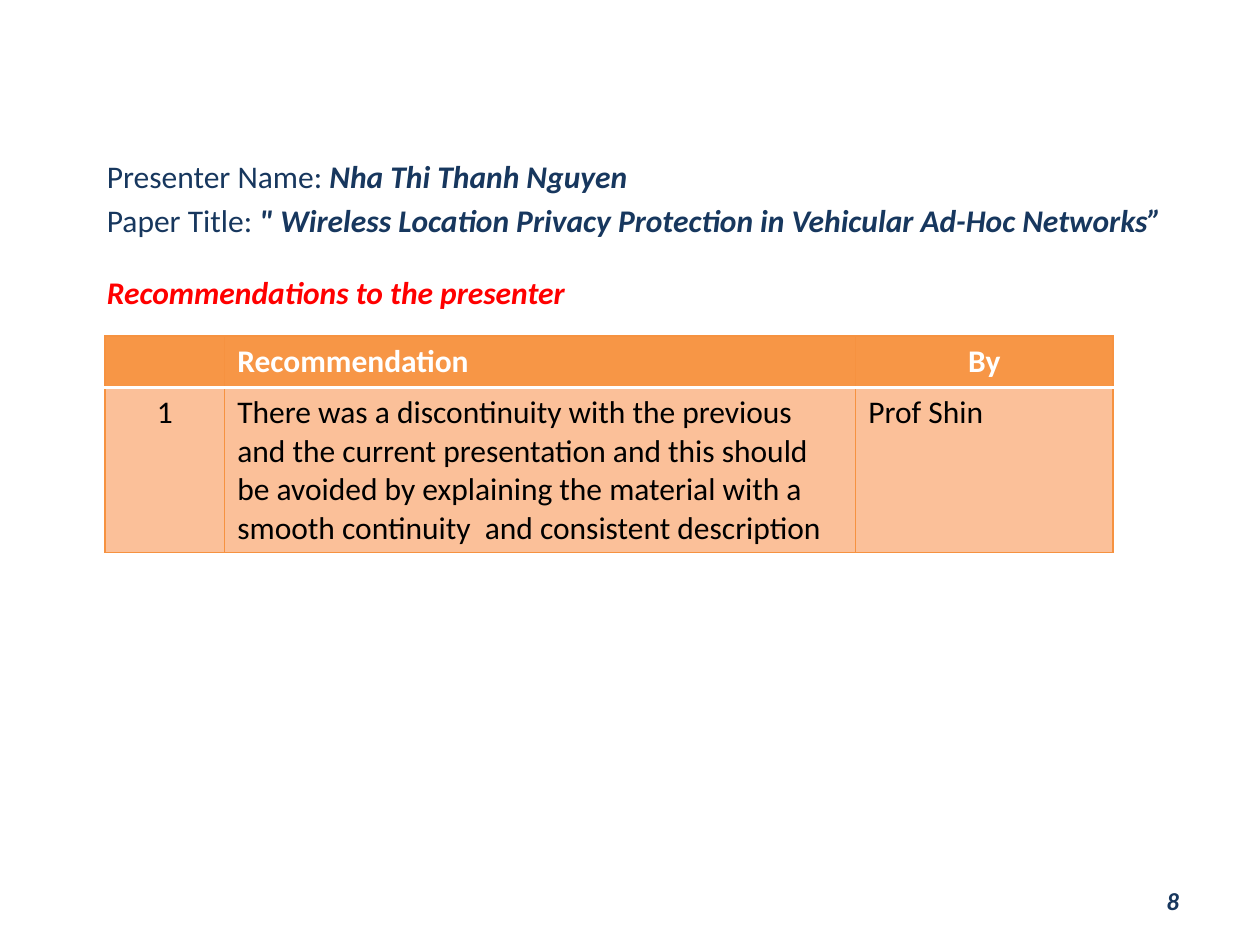
from lxml import etree
from pptx import Presentation
from pptx.dml.color import RGBColor
from pptx.enum.text import MSO_ANCHOR, PP_ALIGN
from pptx.oxml.ns import qn
from pptx.util import Pt

LEFT, MID, RIGHT = PP_ALIGN.LEFT, PP_ALIGN.CENTER, PP_ALIGN.RIGHT
MIDDLE = MSO_ANCHOR.MIDDLE
FACE = "Calibri"
INK = {"navy": "17375E", "red": "FF0000", "head": "F79646", "body": "FBC099",
       "edge": "F69240", "white": "FFFFFF", "black": "000000"}


def style(font, size, ink, bold=False, slant=False):
    font.name, font.size = FACE, Pt(size)
    font.color.rgb = RGBColor.from_string(INK[ink])
    font.bold, font.italic = bold, slant


def add_box(slide, box):
    frame = slide.shapes.add_textbox(*map(Pt, box)).text_frame
    frame.word_wrap = True
    return frame


def add_intro(slide, box):
    """Presenter, paper title and section heading."""
    frame = add_box(slide, box)
    rows = [("Presenter Name: ", "Nha Thi Thanh Nguyen", "navy", 0),
            ("Paper Title: ",
             "\" Wireless Location Privacy Protection in Vehicular Ad-Hoc Networks”",
             "navy", 3.6),
            ("", "Recommendations to the presenter", "red", 19.8)]
    for i, (label, value, ink, gap) in enumerate(rows):
        para = frame.paragraphs[0] if i == 0 else frame.add_paragraph()
        para.space_before = Pt(gap)
        if label:
            style_run(para, label, ink, False)
        style_run(para, value, ink, True)


def style_run(para, text, ink, strong):
    run = para.add_run()
    run.text = text
    style(run.font, 18, ink, strong, strong)


def set_edge(cell, side, ink, width):
    line = etree.SubElement(cell._tc.get_or_add_tcPr(), qn("a:" + side),
                            w=str(Pt(width)))
    fill = etree.SubElement(line, qn("a:solidFill"))
    etree.SubElement(fill, qn("a:srgbClr"), val=INK[ink])


def add_grid(slide, box):
    """Table of recommendations under a header row."""
    rows = [("", "Recommendation", "By"),
            ("1", "There was a discontinuity with the previous and the current "
             "presentation and this should be avoided by explaining the material "
             "with a smooth continuity  and consistent description", "Prof Shin")]
    aligns = [(MID, LEFT, MID), (MID, LEFT, LEFT)]
    table = slide.shapes.add_table(2, 3, *map(Pt, box)).table
    for col, width in zip(table.columns, (68.4, 360.6, 147)):
        col.width = Pt(width)
    for row, height in zip(table.rows, (29.5, box[3] - 29.5)):
        row.height = Pt(height)
    for r, texts in enumerate(rows):
        head = r == 0
        for c, text in enumerate(texts):
            cell = table.cell(r, c)
            cell.text = text
            para = cell.text_frame.paragraphs[0]
            para.alignment = aligns[r][c]
            style(para.font, 18, "white" if head else "black", head)
            # Borders come before the fill in the cell's XML
            for side in ("lnL", "lnR", "lnT", "lnB"):
                rule = side == ("lnB" if head else "lnT")
                set_edge(cell, side, "white" if rule else "edge",
                         2 if rule else 0.75)
            cell.fill.solid()
            cell.fill.fore_color.rgb = RGBColor.from_string(
                INK["head" if head else "body"])


def add_page(slide, box):
    """Page number."""
    frame = add_box(slide, box)
    frame.vertical_anchor = MIDDLE
    para = frame.paragraphs[0]
    para.text = "8 "
    para.alignment = RIGHT
    style(para.font, 14, "navy", True, True)


def main():
    deck = Presentation()
    deck.slide_width, deck.slide_height = Pt(720), Pt(540)
    slide = deck.slides.add_slide(deck.slide_layouts[6])
    add_intro(slide, (54, 86, 624, 100))
    add_page(slide, (516, 500.4, 168, 28.8))
    add_grid(slide, (60, 192, 576, 123.5))
    deck.save("out.pptx")


if __name__ == "__main__":
    main()
